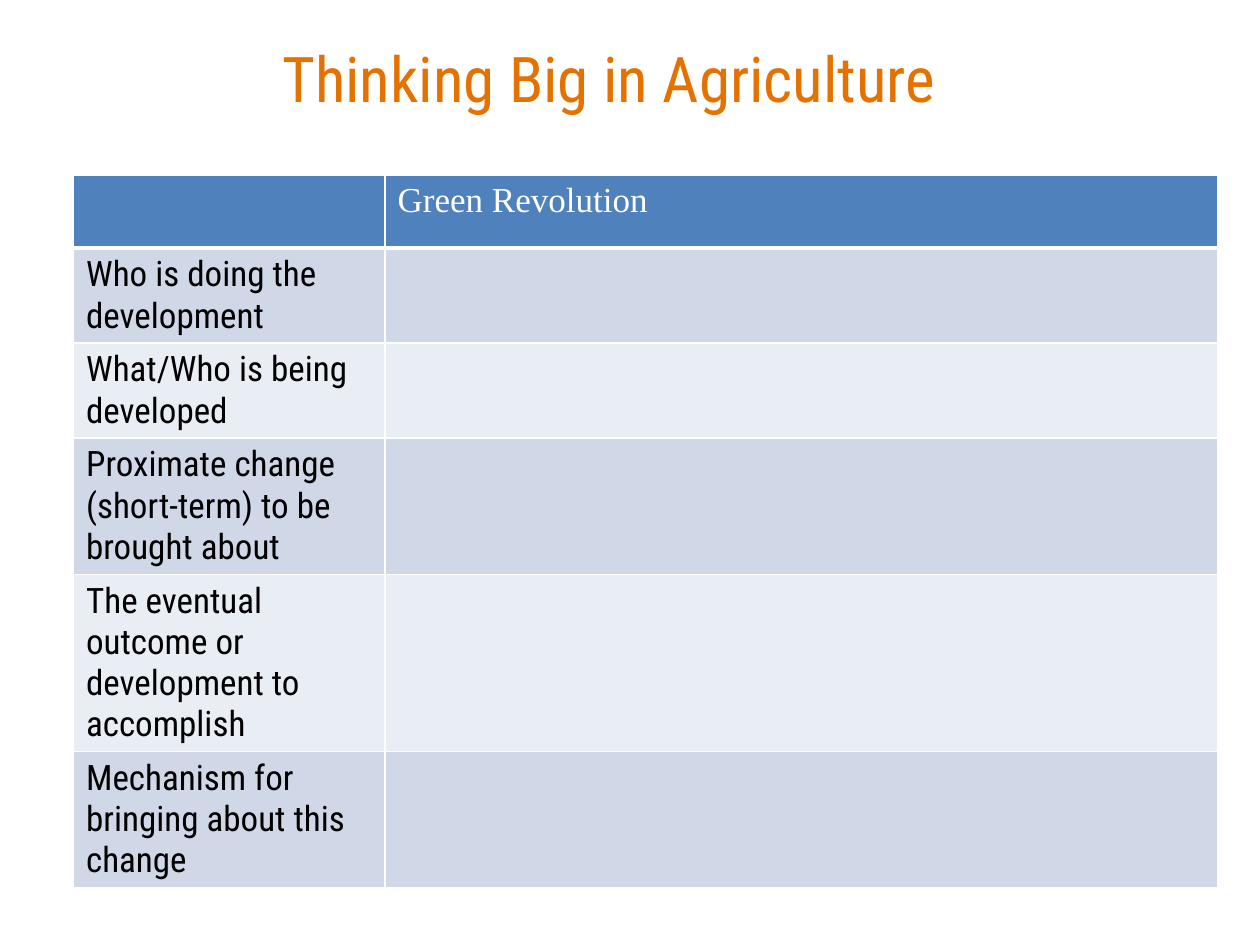
from pptx import Presentation
from pptx.dml.color import RGBColor
from pptx.enum.text import MSO_ANCHOR, PP_ALIGN
from pptx.oxml import parse_xml
from pptx.oxml.ns import nsdecls
from pptx.util import Pt

ORANGE = RGBColor(0xE4, 0x72, 0x00)
BLUE = RGBColor(0x4F, 0x81, 0xBD)
DARK_BAND = RGBColor(0xD0, 0xD8, 0xE8)
LIGHT_BAND = RGBColor(0xE9, 0xED, 0xF4)
WHITE = RGBColor(0xFF, 0xFF, 0xFF)
BLACK = RGBColor(0x00, 0x00, 0x00)

TITLE_FORMAT = {"name": "Roboto Condensed", "size": Pt(36), "bold": False}
HEADER_FORMAT = {"name": "Times New Roman", "size": Pt(20), "bold": False}
LABEL_FORMAT = {"name": "Roboto Condensed", "size": Pt(20), "bold": False}

HEADER_HEIGHT = 41.8
LINE_HEIGHT = 23.5
CELL_PADDING = 7.2
QUESTIONS = [
    ("Who is doing the development", 2),
    ("What/Who is being developed", 2),
    ("Proximate change (short-term) to be brought about", 3),
    ("The eventual outcome or development to accomplish", 4),
    ("Mechanism for bringing about this change", 3),
]


def format_font(font, values, color):
    for name, value in values.items():
        setattr(font, name, value)
    font.color.rgb = color


def add_borders(cell, bottom_width):
    properties = cell._tc.get_or_add_tcPr()
    widths = {"lnL": 1, "lnR": 1, "lnT": 1, "lnB": bottom_width}
    for position, (tag, width) in enumerate(widths.items()):
        properties.insert(position, parse_xml(
            f'<a:{tag} {nsdecls("a")} w="{Pt(width)}"><a:solidFill>'
            f'<a:srgbClr val="{WHITE}"/></a:solidFill></a:{tag}>'))


presentation = Presentation()
presentation.slide_width, presentation.slide_height = Pt(720), Pt(540)
slide = presentation.slides.add_slide(presentation.slide_layouts[5])

title = slide.shapes.title
title.left, title.top, title.width, title.height = Pt(42), Pt(16), Pt(612), Pt(56)
title.text_frame.text = "Thinking Big in Agriculture"
title.text_frame.vertical_anchor = MSO_ANCHOR.MIDDLE
paragraph = title.text_frame.paragraphs[0]
paragraph.alignment = PP_ALIGN.CENTER
format_font(paragraph.font, TITLE_FORMAT, ORANGE)

heights = [HEADER_HEIGHT]
heights += [CELL_PADDING + LINE_HEIGHT * lines for _, lines in QUESTIONS]
rows = [("", "Green Revolution")] + [(question, "") for question, _ in QUESTIONS]
table = slide.shapes.add_table(
    len(rows), 2, Pt(42), Pt(100), Pt(654), Pt(sum(heights))).table
table.columns[0].width, table.columns[1].width = Pt(178), Pt(476)

for row_index, (texts, height) in enumerate(zip(rows, heights)):
    table.rows[row_index].height = Pt(height)
    is_header = row_index == 0
    band = DARK_BAND if row_index % 2 else LIGHT_BAND
    for column_index, text in enumerate(texts):
        cell = table.cell(row_index, column_index)
        cell.text = text
        cell.fill.solid()
        cell.fill.fore_color.rgb = BLUE if is_header else band
        add_borders(cell, 3 if is_header else 1)
        format_font(cell.text_frame.paragraphs[0].font,
                    HEADER_FORMAT if is_header else LABEL_FORMAT,
                    WHITE if is_header else BLACK)

presentation.save("out.pptx")
